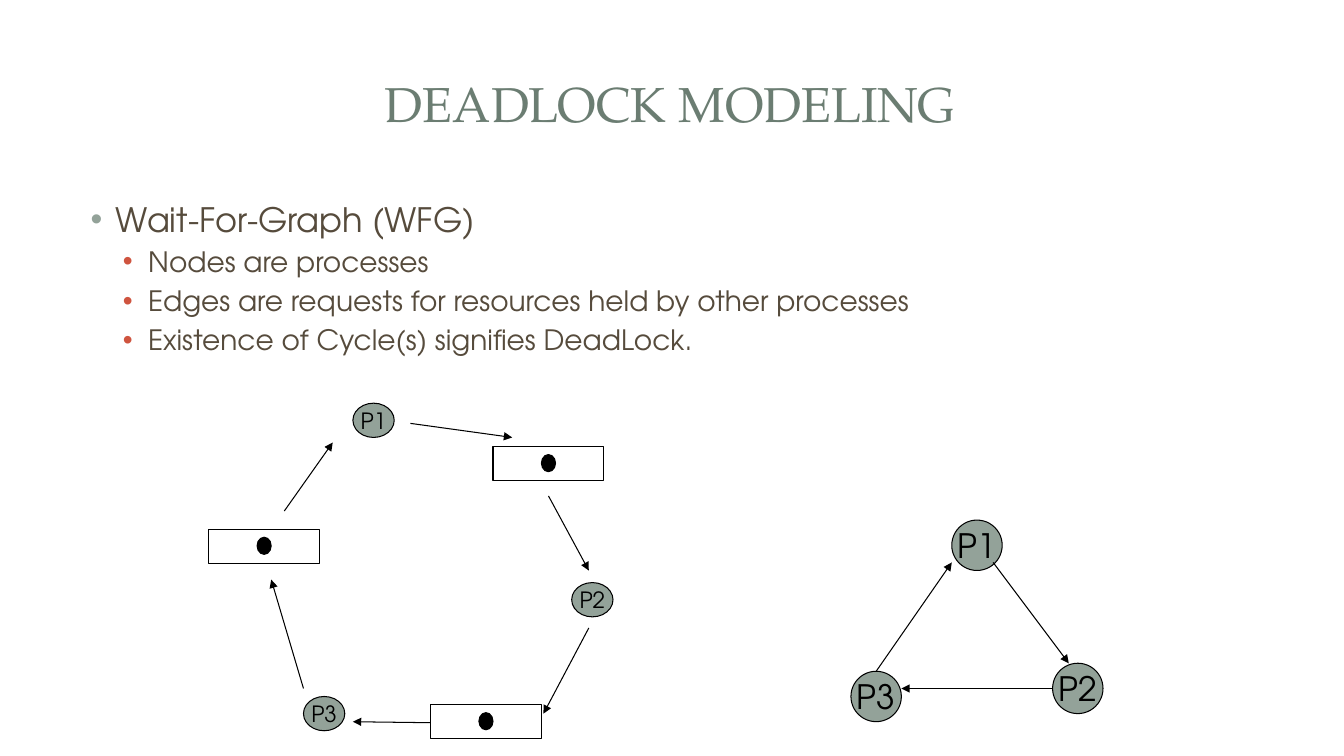
from lxml import etree
from pptx import Presentation
from pptx.dml.color import RGBColor
from pptx.enum.shapes import MSO_CONNECTOR, MSO_SHAPE
from pptx.enum.text import MSO_ANCHOR, PP_ALIGN
from pptx.oxml.ns import qn
from pptx.util import Pt

PX = 9144
RECTANGLE = MSO_SHAPE.RECTANGLE
NODE = MSO_SHAPE.FLOWCHART_CONNECTOR
STRAIGHT = MSO_CONNECTOR.STRAIGHT
CENTER = PP_ALIGN.CENTER
MIDDLE = MSO_ANCHOR.MIDDLE

TITLE_FONT = "TeX Gyre Pagella"
BODY_FONT = "TeX Gyre Adventor"
BLACK, WHITE, SAGE = "000000", "FFFFFF", "93A299"
TITLE_COLOR, BODY_COLOR, RED = "6B7D72", "564B3C", "CF543F"

BULLETS = [
    (0, "Wait-For-Graph (WFG)"),
    (1, "Nodes are processes"),
    (1, "Edges are requests for resources held by other processes"),
    (1, "Existence of Cycle(s) signifies DeadLock."),
]
LEVELS = [(24, 38, SAGE), (20, 70, RED)]

WAIT_NODES = [("P1", 944, 516), ("P2", 1044, 658), ("P3", 844, 666)]
WAIT_EDGES = [
    (869, 666, 944, 558),
    (985, 558, 1060, 658),
    (1044, 683, 894, 683),
]
CYCLE_NODES = [("P1", 350, 400), ("P2", 567, 578), ("P3", 301, 691)]
RESOURCES = [(207, 525), (489, 443), (427, 699)]
CYCLE_EDGES = [
    (407, 420, 508, 434),
    (544, 492, 584, 566),
    (584, 623, 539, 708),
    (427, 717, 350, 716),
    (301, 683, 269, 575),
    (282, 507, 330, 439),
]


def px(value):
    return value * PX


def color(value):
    return RGBColor.from_string(value)


def set_font(paragraph, name, size, value):
    paragraph.font.name = name
    paragraph.font.size = Pt(size)
    paragraph.font.color.rgb = color(value)


def add_text_frame(slide, left, top, width, height):
    box = slide.shapes.add_textbox(px(left), px(top), px(width), px(height))
    box.text_frame.word_wrap = True
    return box.text_frame


def add_title(slide, text):
    frame = add_text_frame(slide, 62, 45, 1205, 114)
    frame.vertical_anchor = MIDDLE
    paragraph = frame.paragraphs[0]
    paragraph.text = text
    paragraph.alignment = CENTER
    set_font(paragraph, TITLE_FONT, 35, TITLE_COLOR)


def set_bullet(paragraph, margin, value):
    properties = paragraph._p.get_or_add_pPr()
    properties.set("marL", str(px(margin)))
    properties.set("indent", str(px(-25)))
    bullet_color = etree.Element(qn("a:buClr"))
    etree.SubElement(bullet_color, qn("a:srgbClr"), val=value)
    bullet_font = etree.Element(qn("a:buFont"), typeface="Arial")
    bullet = etree.Element(qn("a:buChar"), char="•")
    first = properties.find(qn("a:defRPr"))
    for element in (bullet_color, bullet_font, bullet):
        first.addprevious(element)


def add_bullets(slide, bullets):
    frame = add_text_frame(slide, 67, 192, 1200, 478)
    for index, (level, text) in enumerate(bullets):
        paragraph = frame.add_paragraph() if index else frame.paragraphs[0]
        size, margin, bullet_color = LEVELS[level]
        paragraph.text = text
        paragraph.level = level
        paragraph.space_before = Pt(size * 0.2)
        set_font(paragraph, BODY_FONT, size, BODY_COLOR)
        set_bullet(paragraph, margin, bullet_color)


def add_outlined(slide, kind, left, top, width, height, fill):
    shape = slide.shapes.add_shape(kind, px(left), px(top), px(width), px(height))
    shape.shadow.inherit = False
    shape.fill.solid()
    shape.fill.fore_color.rgb = color(fill)
    shape.line.color.rgb = color(BLACK)
    shape.line.width = Pt(0.75)
    return shape


def add_process(slide, name, left, top, width, height, size):
    shape = add_outlined(slide, NODE, left, top, width, height, SAGE)
    frame = shape.text_frame
    frame.word_wrap = False
    frame.vertical_anchor = MIDDLE
    paragraph = frame.paragraphs[0]
    paragraph.text = name
    paragraph.alignment = CENTER
    set_font(paragraph, BODY_FONT, size, BLACK)


def add_resource(slide, left, top):
    add_outlined(slide, RECTANGLE, left, top, 110, 34, WHITE)
    add_outlined(slide, NODE, left + 48, top + 8, 14, 17, BLACK)


def add_arrow(slide, *ends):
    arrow = slide.shapes.add_connector(STRAIGHT, *map(px, ends))
    arrow.line.color.rgb = color(BLACK)
    arrow.line.width = Pt(0.75)
    etree.SubElement(arrow.line._get_or_add_ln(), qn("a:tailEnd"), type="triangle")
    etree.SubElement(arrow._element.spPr, qn("a:effectLst"))


def main():
    presentation = Presentation()
    presentation.slide_width = px(1333)
    presentation.slide_height = px(750)
    slide = presentation.slides.add_slide(presentation.slide_layouts[6])
    add_title(slide, "DEADLOCK MODELING")
    add_bullets(slide, BULLETS)
    for name, left, top in WAIT_NODES:
        add_process(slide, name, left, top, 50, 50, 24)
    for name, left, top in CYCLE_NODES:
        add_process(slide, name, left, top, 41, 34, 16)
    for left, top in RESOURCES:
        add_resource(slide, left, top)
    for ends in WAIT_EDGES + CYCLE_EDGES:
        add_arrow(slide, *ends)
    presentation.save("out.pptx")


if __name__ == "__main__":
    main()
